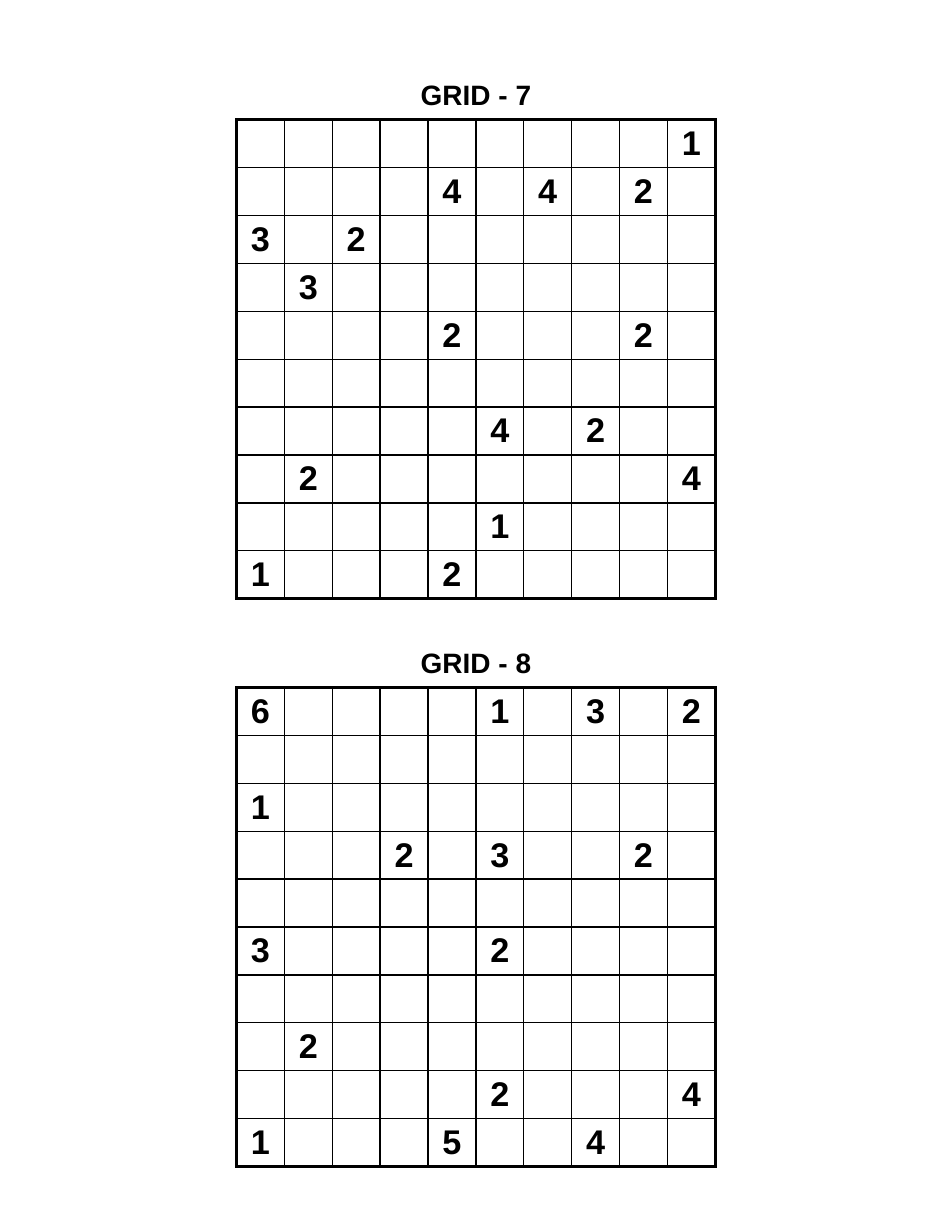
import pptx
import pptx.dml.color
import pptx.enum.text
import pptx.oxml.ns
import pptx.util
from lxml import etree

Pt = pptx.util.Pt
BLACK = pptx.dml.color.RGBColor(0x00, 0x00, 0x00)
WHITE = pptx.dml.color.RGBColor(0xFF, 0xFF, 0xFF)

PAGE_W, PAGE_H = 612, 792
CELL = 30.8
FIRST_TITLE_TOP = 49.7
TITLE_TO_GRID = 27.3
PUZZLE_STEP = 365

# One string per row; a dot is an empty cell.
PUZZLES = {
    "GRID - 7": (
        ".........1",
        "....4.4.2.",
        "3.2.......",
        ".3........",
        "....2...2.",
        "..........",
        ".....4.2..",
        ".2.......4",
        ".....1....",
        "1...2.....",
    ),
    "GRID - 8": (
        "6....1.3.2",
        "..........",
        "1.........",
        "...2.3..2.",
        "..........",
        "3....2....",
        "..........",
        ".2........",
        ".....2...4",
        "1...5..4..",
    ),
}


class PuzzlePage:
    font = "Arial"
    title_size = 18
    clue_size = 22
    inner_line = 1
    outer_line = 2

    def __init__(self, prs):
        self.s = prs.slides.add_slide(prs.slide_layouts[6])

    def style(self, p, size):
        p.alignment = pptx.enum.text.PP_ALIGN.CENTER
        p.font.name = self.font
        p.font.size = Pt(size)
        p.font.bold = True
        p.font.color.rgb = BLACK

    def title(self, text, left, top, width):
        sp = self.s.shapes.add_textbox(Pt(left), Pt(top), Pt(width), Pt(21.6))
        tf = sp.text_frame
        tf.word_wrap = True
        tf.auto_size = pptx.enum.text.MSO_AUTO_SIZE.SHAPE_TO_FIT_TEXT
        tf.margin_left = tf.margin_right = tf.margin_top = tf.margin_bottom = 0
        tf.text = text
        self.style(tf.paragraphs[0], self.title_size)

    def border(self, cell, side, width):
        """Draw one side (L, R, T or B) of a cell."""
        qn = pptx.oxml.ns.qn
        ln = etree.SubElement(cell._tc.get_or_add_tcPr(), qn(f"a:ln{side}"), w=str(Pt(width)))
        fill = etree.SubElement(ln, qn("a:solidFill"))
        etree.SubElement(fill, qn("a:srgbClr"), val=str(BLACK))

    def grid(self, rows, left, top):
        n = len(rows)
        side = Pt(CELL * n)
        table = self.s.shapes.add_table(n, n, Pt(left), Pt(top), side, side).table
        table.first_row = table.horz_banding = False
        for line in (*table.columns, *table.rows):
            if line in table.columns:
                line.width = Pt(CELL)
            else:
                line.height = Pt(CELL)
        for i, row in enumerate(rows):
            for j, clue in enumerate(row):
                cell = table.cell(i, j)
                outer = {"L": j == 0, "R": j == n - 1, "T": i == 0, "B": i == n - 1}
                for edge, is_outer in outer.items():
                    self.border(cell, edge, self.outer_line if is_outer else self.inner_line)
                cell.fill.solid()
                cell.fill.fore_color.rgb = WHITE
                cell.margin_left = cell.margin_right = cell.margin_top = cell.margin_bottom = 0
                cell.vertical_anchor = pptx.enum.text.MSO_ANCHOR.MIDDLE
                if clue != ".":
                    cell.text = clue
                self.style(cell.text_frame.paragraphs[0], self.clue_size)


def main():
    prs = pptx.Presentation()
    prs.slide_width, prs.slide_height = Pt(PAGE_W), Pt(PAGE_H)
    page = PuzzlePage(prs)
    for k, (name, rows) in enumerate(PUZZLES.items()):
        width = CELL * len(rows)
        left = (PAGE_W - width) / 2
        top = FIRST_TITLE_TOP + k * PUZZLE_STEP
        page.title(name, left, top, width)
        page.grid(rows, left, top + TITLE_TO_GRID)
    prs.save("out.pptx")


if __name__ == "__main__":
    main()
